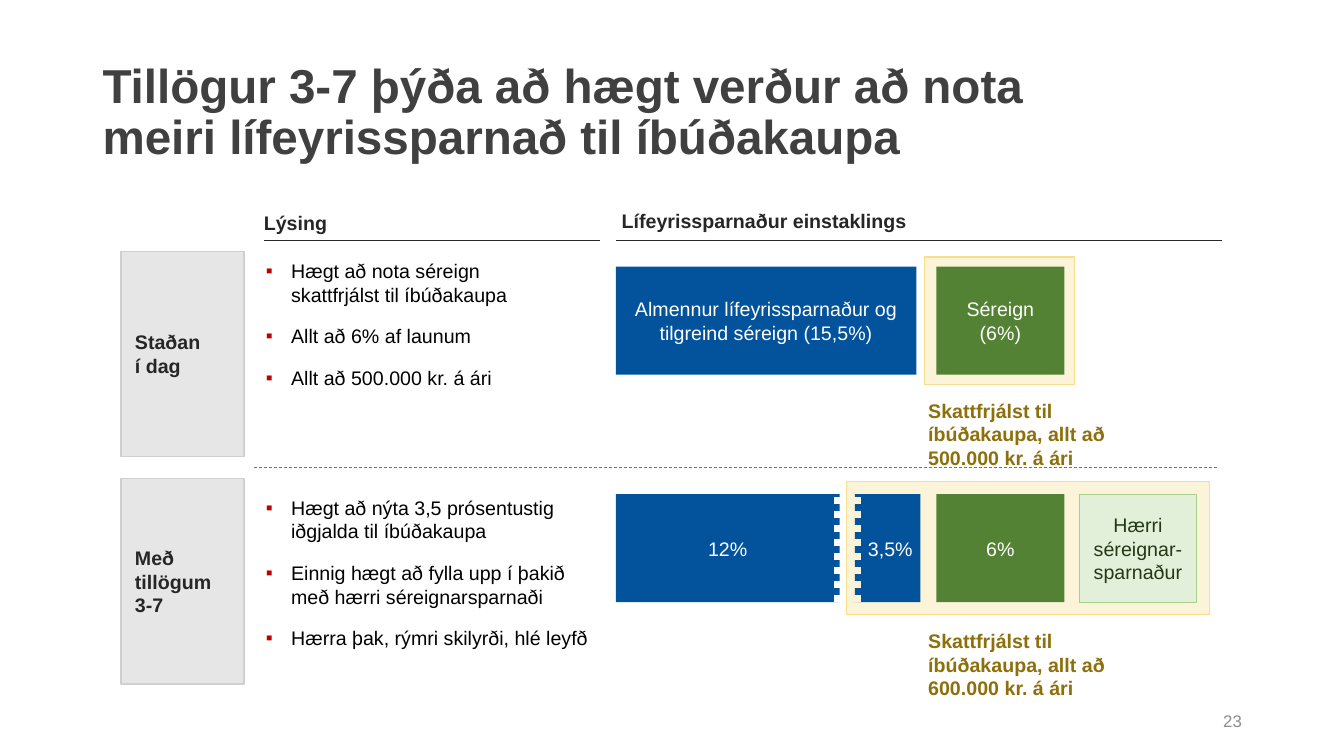
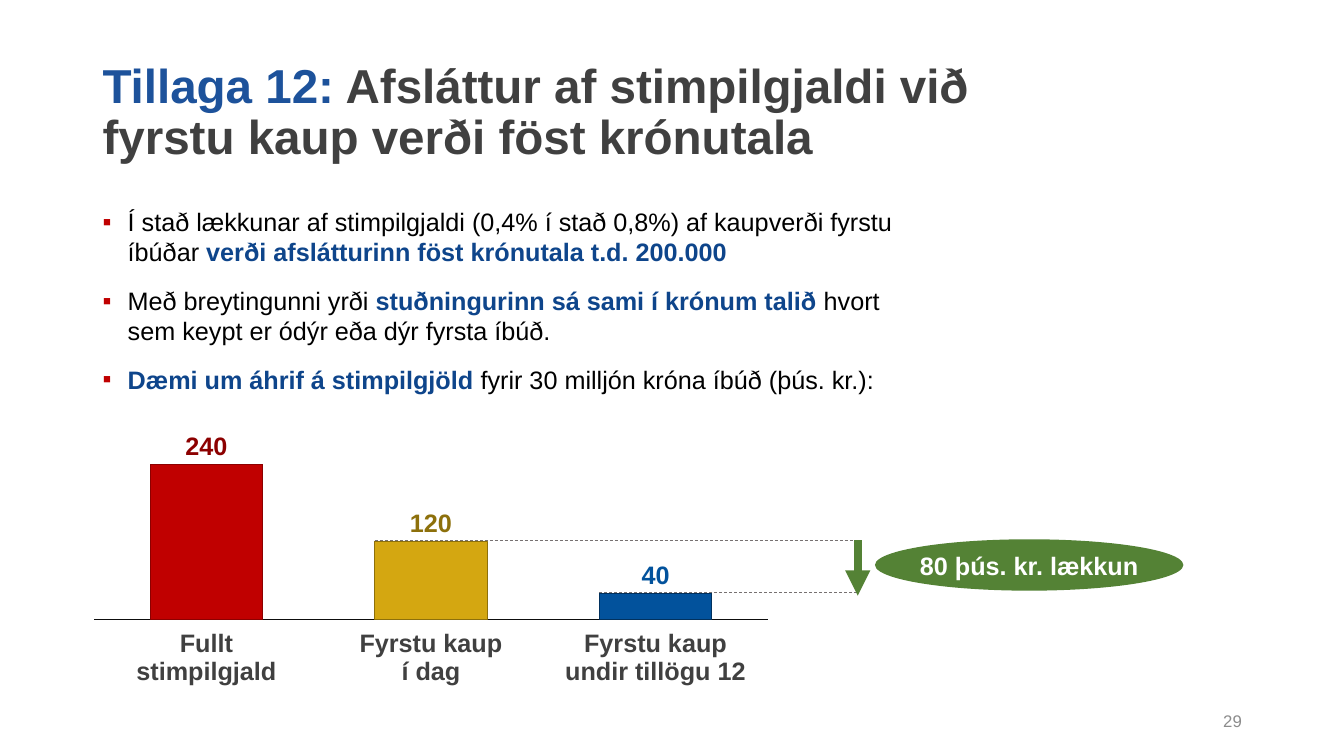
from lxml import etree
from pptx import Presentation
from pptx.chart.data import CategoryChartData
from pptx.dml.color import RGBColor
from pptx.enum.chart import XL_CHART_TYPE, XL_LABEL_POSITION, XL_TICK_LABEL_POSITION, XL_TICK_MARK
from pptx.enum.dml import MSO_LINE
from pptx.enum.shapes import MSO_CONNECTOR, MSO_SHAPE
from pptx.enum.text import MSO_ANCHOR, PP_ALIGN
from pptx.oxml.ns import qn
from pptx.util import Pt

RECT, OVAL = MSO_SHAPE.RECTANGLE, MSO_SHAPE.OVAL
TOP, MIDDLE = MSO_ANCHOR.TOP, MSO_ANCHOR.MIDDLE
LEFT, CENTER, RIGHT = PP_ALIGN.LEFT, PP_ALIGN.CENTER, PP_ALIGN.RIGHT
DASH, DOTS = MSO_LINE.DASH, MSO_LINE.ROUND_DOT
STRAIGHT = MSO_CONNECTOR.STRAIGHT
COLUMNS = XL_CHART_TYPE.COLUMN_CLUSTERED
OUTSIDE = XL_LABEL_POSITION.OUTSIDE_END
LOW, NO_TICK = XL_TICK_LABEL_POSITION.LOW, XL_TICK_MARK.NONE

FONT = "Arial"
COLORS = {
    "title": "404040", "accent": "1D529B", "strong": "0E458B", "black": "000000",
    "white": "FFFFFF", "ink": "262626", "bullet": "C00000", "page": "8C8C8C",
    "blue": "02529C", "green": "548235", "pale_green": "E2F0D9", "green_edge": "A9D18E",
    "green_ink": "243716", "cream": "FCF4D9", "cream_edge": "F6DE8D", "ochre": "8D700B",
    "gray": "E7E6E6", "gray_edge": "D0CECE", "dash": "767171", "axis": "0D0D0D",
    "red": "C00000", "dark_red": "8C0000", "gold": "D4A711", "dark_blue": "01315E",
}
HEADING = {"size": 14, "color": "ink", "bold": True}
BULLETS = {"space_before": Pt(10), "space_after": Pt(3)}


def rgb(name):
    return RGBColor.from_string(COLORS[name])


def style_font(font, size, color="black", bold=False):
    for key, value in {"name": FONT, "size": Pt(size), "bold": bold}.items():
        setattr(font, key, value)
    font.color.rgb = rgb(color)


def add_runs(p, runs, fmt):
    for text, extra in runs:
        for i, line in enumerate(text.split("\n")):
            if i:
                p.add_line_break()
            r = p.add_run()
            r.text = line
            style_font(r.font, **{**fmt, **extra})


def add_bullet(p):
    pPr = p._p.get_or_add_pPr()
    pPr.set("marL", str(Pt(18)))
    pPr.set("indent", str(-Pt(18)))
    color = etree.SubElement(pPr, qn("a:buClr"))
    etree.SubElement(color, qn("a:srgbClr")).set("val", COLORS["bullet"])
    etree.SubElement(pPr, qn("a:buFont")).set("typeface", FONT)
    etree.SubElement(pPr, qn("a:buChar")).set("char", "▪")


def fill_text(sp, paragraphs, fmt, anchor=TOP, bullet=False, wrap=True, **para):
    tf = sp.text_frame
    tf.word_wrap = wrap
    tf.vertical_anchor = anchor
    for i, content in enumerate(paragraphs):
        p = tf.add_paragraph() if i else tf.paragraphs[0]
        for key, value in {"alignment": LEFT, **para}.items():
            setattr(p, key, value)
        if bullet:
            add_bullet(p)
        add_runs(p, [(content, {})] if isinstance(content, str) else content, fmt)


def add_text(s, box, paragraphs, fmt, **options):
    sp = s.shapes.add_textbox(*map(Pt, box))
    fill_text(sp, paragraphs, fmt, **options)


def add_block(s, box, fill, edge=None, text=None, color="white", kind=RECT, size=14,
              bold=False, align=CENTER, wrap=True):
    sp = s.shapes.add_shape(kind, *map(Pt, box))
    sp.shadow.inherit = False
    sp.fill.solid()
    sp.fill.fore_color.rgb = rgb(fill)
    if edge:
        sp.line.color.rgb = rgb(edge)
        sp.line.width = Pt(1)
    else:
        sp.line.fill.background()
    if text:
        fmt = {"size": size, "color": color, "bold": bold}
        fill_text(sp, [text], fmt, anchor=MIDDLE, wrap=wrap, alignment=align)
    return sp


def add_line(s, x1, y1, x2, y2, color, width=0.5, dash=None, arrow=False):
    line = s.shapes.add_connector(STRAIGHT, *map(Pt, (x1, y1, x2, y2)))
    line.line.color.rgb = rgb(color)
    line.line.width = Pt(width)
    if dash:
        line.line.dash_style = dash
    if arrow:
        etree.SubElement(line.line._get_or_add_ln(), qn("a:tailEnd")).set("type", "triangle")
    etree.SubElement(line._element.spPr, qn("a:effectLst"))


def new_slide(prs, title, number, title_width):
    s = prs.slides.add_slide(prs.slide_layouts[6])
    add_text(s, (66.2, 28.8, title_width, 104.4), [title],
             {"size": 34, "color": "title", "bold": True}, anchor=MIDDLE, line_spacing=0.9)
    add_text(s, (678.2, 500.4, 216, 28.8), [str(number)], {"size": 12, "color": "page"},
             anchor=MIDDLE, alignment=RIGHT)
    return s


def column_heading(s, x, y, width, text, text_x, text_y):
    add_text(s, (text_x, text_y, width, 25), [text], HEADING, space_after=Pt(5))
    add_line(s, x, y, x + width, y, "ink")


def scheme_row(s, box, label, points, points_box, highlight, pad, bars, note, tears=()):
    x, y, w, h = box
    bar_y, bar_h = y + 11, 77.2
    frame_x, frame_w = highlight
    add_block(s, (x + frame_x, bar_y - pad, frame_w, bar_h + 2 * pad), "cream", "cream_edge")
    sp = add_block(s, (x, y, w, h), "gray", "gray_edge", label, "ink", bold=True, align=LEFT)
    sp.text_frame.margin_left = Pt(10)
    offset, width = points_box
    add_text(s, (x + 96.5, y + offset, width, h - offset), points, {"size": 14},
             bullet=True, **BULLETS)
    for bar_x, bar_w, text, fill, edge, color, wrap in bars:
        add_block(s, (x + bar_x, bar_y, bar_w, bar_h), fill, edge, text, color, wrap=wrap)
    add_text(s, (x + 569.5, bar_y + bar_h + pad + 6.5, 188.6, 41), [note],
             {"size": 14, "color": "ochre", "bold": True})
    for tear_x, color in tears:
        add_line(s, x + tear_x, bar_y + bar_h, x + tear_x, bar_y - 0.5, color, 5, DOTS)


def savings_slide(prs):
    s = new_slide(prs, "Tillögur 3-7 þýða að hægt verður að nota meiri lífeyrissparnað til íbúðakaupa",
                  23, 741.6)
    column_heading(s, 188.6, 171.4, 239.8, "Lýsing", 181.4, 146.9)
    column_heading(s, 439.9, 171.4, 432.7, "Lífeyrissparnaður einstaklings", 437, 145.4)
    scheme_row(
        s, (86.4, 179.5, 87.8, 146.5), "Staðan\ní dag",
        ["Hægt að nota séreign skattfrjálst til íbúðakaupa", "Allt að 6% af launum",
         "Allt að 500.000 kr. á ári"],
        (2, 225.4), (573.8, 107.3), 7,
        [(353.5, 214.6, "Almennur lífeyrissparnaður og tilgreind séreign (15,5%)",
          "blue", None, "white", True),
         (582.5, 91.4, "Séreign (6%)", "green", None, "white", True)],
        "Skattfrjálst til íbúðakaupa, allt að 500.000 kr. á ári")
    add_line(s, 181.4, 334.1, 869.8, 334.1, "dash", dash=DASH)
    scheme_row(
        s, (86.4, 342, 87.8, 146.5), "Með tillögum 3-7",
        ["Hægt að nýta 3,5 prósentustig iðgjalda til íbúðakaupa",
         "Einnig hægt að fylla upp í þakið með hærri séreignarsparnaði",
         "Hærra þak, rýmri skilyrði, hlé leyfð"],
        (8.6, 249.1), (518.4, 259.2), 9,
        [(353.5, 159.8, "12%", "blue", None, "white", True),
         (524.2, 46.8, " 3,5%", "blue", None, "white", False),
         (582.5, 91.4, "6%", "green", None, "white", True),
         (684.7, 83.5, "Hærri séreignar- sparnaður", "pale_green", "green_edge", "green_ink", True)],
        "Skattfrjálst til íbúðakaupa, allt að 600.000 kr. á ári",
        tears=[(511.9, "white"), (526.3, "cream")])


def set_plot_area(chart, bounds):
    area = chart._chartSpace.chart.plotArea
    for old in area.findall(qn("c:layout")):
        area.remove(old)
    layout = etree.Element(qn("c:layout"))
    area.insert(0, layout)
    manual = etree.SubElement(layout, qn("c:manualLayout"))
    settings = [("layoutTarget", "inner"), ("xMode", "edge"), ("yMode", "edge"),
                *zip("xywh", bounds)]
    for tag, value in settings:
        etree.SubElement(manual, qn("c:" + tag)).set("val", str(value))


def fee_chart(s, box):
    x, y, w, h = box
    values, top_value = (240, 120, 40), 300
    px, py, pw, ph = bounds = (0.022, 0.03, 0.956, 0.683)
    data = CategoryChartData()
    data.categories = ["Fullt\nstimpilgjald", "Fyrstu kaup\ní dag", "Fyrstu kaup\nundir tillögu 12"]
    data.add_series("Series 1", values)
    chart = s.shapes.add_chart(COLUMNS, *map(Pt, box), data).chart
    chart.has_legend = chart.has_title = False
    style_font(chart.font, 18)
    set_plot_area(chart, bounds)

    axis = chart.value_axis
    for key, value in {"visible": False, "has_major_gridlines": False,
                       "minimum_scale": 0, "maximum_scale": top_value}.items():
        setattr(axis, key, value)
    axis = chart.category_axis
    for key, value in {"major_tick_mark": NO_TICK, "minor_tick_mark": NO_TICK,
                       "tick_label_position": LOW}.items():
        setattr(axis, key, value)
    style_font(axis.tick_labels.font, 18, "title", True)
    axis.format.line.color.rgb = rgb("axis")
    axis.format.line.width = Pt(0.75)

    plot = chart.plots[0]
    for key, value in {"gap_width": 100, "overlap": -27, "vary_by_categories": False,
                       "has_data_labels": True}.items():
        setattr(plot, key, value)
    plot.data_labels.show_value = True
    plot.data_labels.position = OUTSIDE
    style_font(plot.data_labels.font, 18, "title", True)
    shades = [("red", "dark_red", "dark_red"), ("gold", "ochre", "ochre"),
              ("blue", "dark_blue", "blue")]
    for i, (fill, edge, label) in enumerate(shades):
        point = plot.series[0].points[i]
        point.format.fill.solid()
        point.format.fill.fore_color.rgb = rgb(fill)
        point.format.line.color.rgb = rgb(edge)
        point.format.line.width = Pt(0.75)
        style_font(point.data_label.font, 18, label, True)
        point.data_label.position = OUTSIDE

    base, step, arrow_x = y + h * (py + ph), w * pw / len(values), 612.7
    levels = [base - 1 - h * ph * value / top_value for value in values]
    for i in (1, 2):
        add_line(s, x + w * px + step * (i + 0.25), levels[i], arrow_x, levels[i], "dash", dash=DASH)
    add_line(s, arrow_x, levels[1], arrow_x, levels[2] + 2.5, "green", 6, arrow=True)


def discount_slide(prs):
    s = new_slide(prs, [("Tillaga 12:", {"color": "accent"}),
                        (" Afsláttur af stimpilgjaldi við\nfyrstu kaup verði föst krónutala", {})],
                  29, 803.5)
    strong = {"color": "strong", "bold": True}
    add_text(s, (66.2, 144, 586.1, 150), [
        [("Í stað lækkunar af stimpilgjaldi (0,4% í stað 0,8%) af kaupverði fyrstu íbúðar ", {}),
         ("verði afslátturinn föst krónutala t.d. 200.000", strong)],
        [("Með breytingunni yrði ", {}),
         ("stuðningurinn sá sami í krónum talið ", strong),
         ("hvort sem keypt er ódýr eða dýr fyrsta íbúð.", {})],
        [("Dæmi um áhrif á stimpilgjöld ", strong),
         ("fyrir 30 milljón króna íbúð (þús. kr.):", {})],
    ], {"size": 18}, bullet=True, **BULLETS)
    fee_chart(s, (56.2, 298.1, 503.3, 202.3))
    add_block(s, (625, 385.2, 220.3, 36.7), "green", text="80 þús. kr. lækkun", kind=OVAL,
              size=18, bold=True, wrap=False)


def main():
    prs = Presentation()
    prs.slide_width, prs.slide_height = Pt(960), Pt(540)
    savings_slide(prs)
    discount_slide(prs)
    prs.save("out.pptx")


if __name__ == "__main__":
    main()
